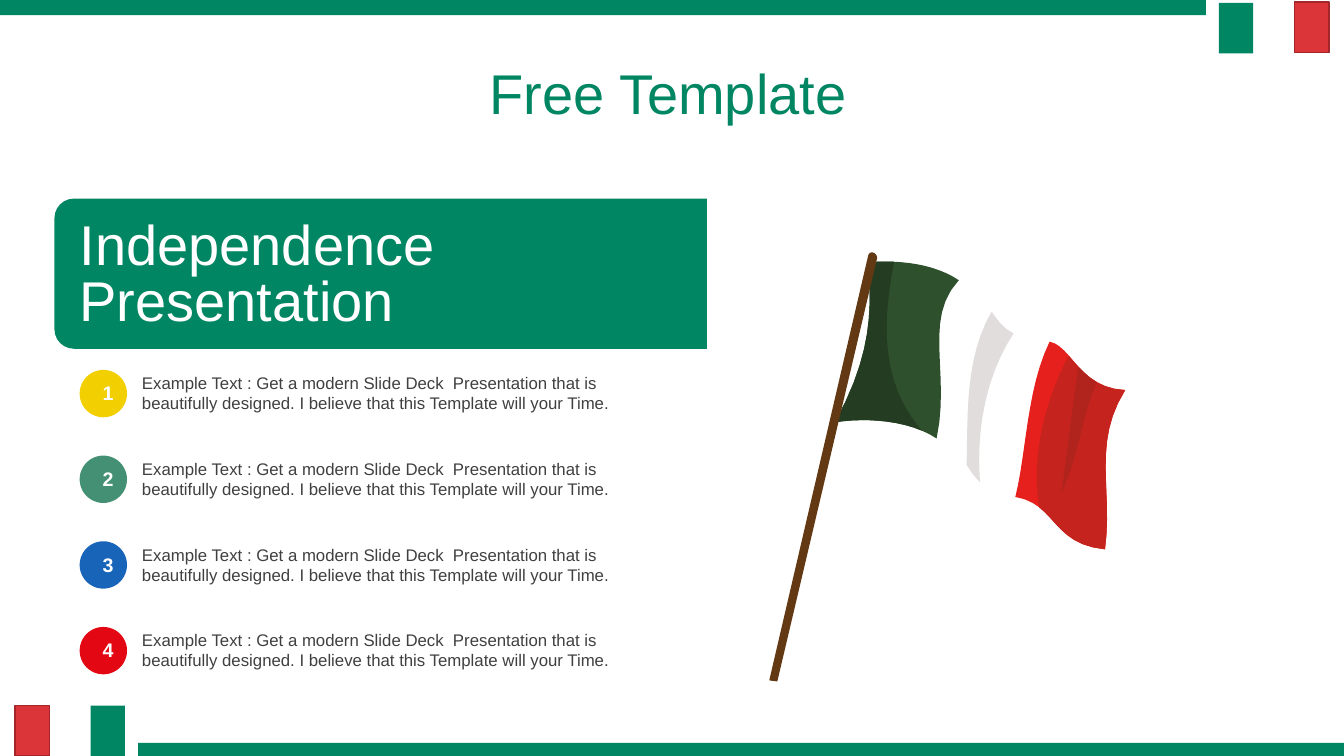
from dataclasses import dataclass

from pptx import Presentation
from pptx import util as u
from pptx.dml.color import RGBColor
from pptx.enum import shapes as kinds
from pptx.enum import text as styles


@dataclass(frozen=True)
class Theme:
    font: str = "Arial"
    heading_size: int = 40
    number_size: int = 14
    body_size: int = 12
    white: str = "FFFFFF"
    body: str = "404040"
    green: str = "008662"
    red: str = "DC3539"
    red_edge: str = "A3272A"
    bullets: tuple = ("F1CF01", "449074", "1764B9", "E30613")
    flag_green: str = "2E502C"
    flag_green_shade: str = "243C22"
    flag_red: str = "E5201D"
    flag_red_shade: str = "C4231E"
    flag_red_fold: str = "B1241E"
    flag_white_shade: str = "E1DDDD"
    pole: str = "633913"


THEME = Theme()
EXAMPLE = ("Example Text : Get a modern Slide Deck  Presentation that is "
           "beautifully designed. I believe that this Template will your Time.")
CURVE_STEPS = 12


def paint(part, fill, edge=None):
    part.shadow.inherit = False
    part.fill.solid()
    part.fill.fore_color.rgb = RGBColor.from_string(fill)
    if edge:
        part.line.color.rgb = RGBColor.from_string(edge)
        part.line.width = u.Pt(1)
    else:
        part.line.fill.background()


def add_preset(slide, kind, box, fill, edge=None):
    part = slide.shapes.add_shape(kind, *map(u.Inches, box))
    paint(part, fill, edge)
    return part


def add_words(slide, box, lines, size, color, bold=None, align=None,
              insets=(0.1, 0.05), spacing=None, before=None, grow=True):
    words = slide.shapes.add_textbox(*map(u.Inches, box))
    frame = words.text_frame
    frame.word_wrap = True
    frame.vertical_anchor = styles.MSO_ANCHOR.MIDDLE
    if grow:
        frame.auto_size = styles.MSO_AUTO_SIZE.SHAPE_TO_FIT_TEXT
    frame.margin_left = frame.margin_right = u.Inches(insets[0])
    frame.margin_top = frame.margin_bottom = u.Inches(insets[1])
    for index, line in enumerate(lines):
        paragraph = frame.paragraphs[0] if index == 0 else frame.add_paragraph()
        paragraph.alignment = align
        paragraph.line_spacing = spacing
        paragraph.space_before = before
        run = paragraph.add_run()
        run.text = line
        run.font.name = THEME.font
        run.font.size = u.Pt(size)
        run.font.bold = bold
        run.font.color.rgb = RGBColor.from_string(color)


def curve(*anchors):
    points = []
    for step in range(CURVE_STEPS + 1):
        t = step / CURVE_STEPS
        weights = ((1 - t) ** 3, 3 * t * (1 - t) ** 2, 3 * t * t * (1 - t), t ** 3)
        points.append(tuple(sum(w * anchor[axis] for w, anchor in zip(weights, anchors))
                            for axis in (0, 1)))
    return points


def add_outline(slide, fill, points):
    corners = [tuple(map(u.Inches, point)) for point in points]
    builder = slide.shapes.build_freeform(*corners[0])
    builder.add_line_segments(corners[1:], close=True)
    paint(builder.convert_to_shape(), fill)


def add_panel(slide, fill, top, right, bottom, left):
    add_outline(slide, fill, top + right + bottom[::-1] + left[::-1])


def add_flag(slide):
    tops = [(8.63, 2.6), (9.51, 2.78), (10.41, 3.39), (11.16, 3.87)]
    feet = [(8.28, 4.19), (9.29, 4.35), (10.07, 4.93), (10.96, 5.45)]
    side_bends = [((8.59, 2.85), (8.75, 3.35)), ((9.15, 3.17), (9.43, 3.7)),
                  ((10.18, 3.86), (10.18, 4.5)), ((10.83, 4.4), (11.04, 4.85))]
    top_bends = [((8.95, 2.58), (9.27, 2.62)), ((9.95, 3), (9.75, 3.35)),
                 ((10.63, 3.43), (10.7, 3.85))]
    foot_bends = [((8.6, 4.14), (9.02, 4.17)), ((9.67, 4.5), (9.55, 4.87)),
                  ((10.48, 5), (10.43, 5.4))]
    sides = [curve(top, *bends, foot) for top, bends, foot in zip(tops, side_bends, feet)]
    upper = [curve(a, *bends, b) for a, bends, b in zip(tops, top_bends, tops[1:])]
    lower = [curve(a, *bends, b) for a, bends, b in zip(feet, foot_bends, feet[1:])]

    for index, fill in enumerate((THEME.white, THEME.flag_green, THEME.flag_red)):
        panel = (1, 0, 2)[index]
        add_panel(slide, fill, upper[panel], sides[panel + 1], lower[panel], sides[panel])

    red_top, red_foot = upper[2][4:], lower[2][3:]
    add_panel(slide, THEME.flag_red_shade, red_top, sides[3], red_foot,
              curve(red_top[0], (10.38, 3.95), (10.22, 4.5), red_foot[0]))

    green_top, green_foot = upper[0][:4], lower[0][:11]
    add_panel(slide, THEME.flag_green_shade, green_top,
              curve(green_top[-1], (8.75, 3.2), (8.73, 3.8), green_foot[-1]),
              green_foot, sides[0])

    fold_top = upper[2][6:10]
    add_outline(slide, THEME.flag_red_fold,
                fold_top + curve(fold_top[-1], (10.75, 4.05), (10.68, 4.6), (10.53, 4.88)))

    white_top, white_foot = upper[1][5:10], lower[1][5:9]
    add_panel(slide, THEME.flag_white_shade, white_top,
              curve(white_top[-1], (9.77, 3.74), (9.68, 4.29), white_foot[-1]),
              white_foot, curve(white_top[0], (9.57, 3.55), (9.6, 4.1), white_foot[0]))

    pole_tip = curve((8.7, 2.56), (8.7, 2.5), (8.62, 2.48), (8.61, 2.54))
    add_outline(slide, THEME.pole, [(7.71, 6.76), *pole_tip, (7.63, 6.75)])


def add_border(slide, bar, green_corner, red_corner):
    rectangle = kinds.MSO_SHAPE.RECTANGLE
    add_preset(slide, rectangle, (*red_corner, 0.34, 0.5), THEME.red, THEME.red_edge)
    add_preset(slide, rectangle, (*bar, 11.96, 0.15), THEME.green)
    add_preset(slide, rectangle, (*green_corner, 0.34, 0.5), THEME.green)


def add_banner(slide):
    banner = add_preset(slide, kinds.MSO_SHAPE.ROUND_2_SAME_RECTANGLE,
                        (3.03, -0.52, 1.49, 6.47), THEME.green)
    banner.rotation = 270
    banner.adjustments[0] = 0.13
    banner.adjustments[1] = 0
    add_words(slide, (0.79, 2.18, 4.17, 1.13), ("Independence", "Presentation"),
              THEME.heading_size, THEME.white, insets=(0, 0), spacing=u.Pt(40))


def add_item(slide, number, top, color):
    add_preset(slide, kinds.MSO_SHAPE.OVAL, (0.79, top, 0.47, 0.47), color)
    add_words(slide, (1.31, top - 0.02, 4.89, 0.5), (EXAMPLE,), THEME.body_size, THEME.body)
    add_words(slide, (0.92, top + 0.11, 0.22, 0.24), (str(number),), THEME.number_size,
              THEME.white, bold=True, align=styles.PP_ALIGN.CENTER, insets=(0.1, 0))


def main():
    deck = Presentation()
    deck.slide_width, deck.slide_height = u.Inches(13.33), u.Inches(7.5)
    slide = deck.slides.add_slide(deck.slide_layouts[6])
    add_border(slide, (1.37, 7.37), (0.9, 7), (0.15, 7))
    add_border(slide, (0, 0), (12.09, 0.03), (12.84, 0.02))
    add_banner(slide)
    for index, color in enumerate(THEME.bullets):
        add_item(slide, index + 1, 3.67 + 0.85 * index, color)
    add_words(slide, (0.86, 0.56, 11.53, 0.79), ("Free Template",), THEME.heading_size,
              THEME.green, align=styles.PP_ALIGN.CENTER, spacing=0.9,
              before=u.Pt(10), grow=False)
    add_flag(slide)
    deck.save("out.pptx")


if __name__ == "__main__":
    main()
